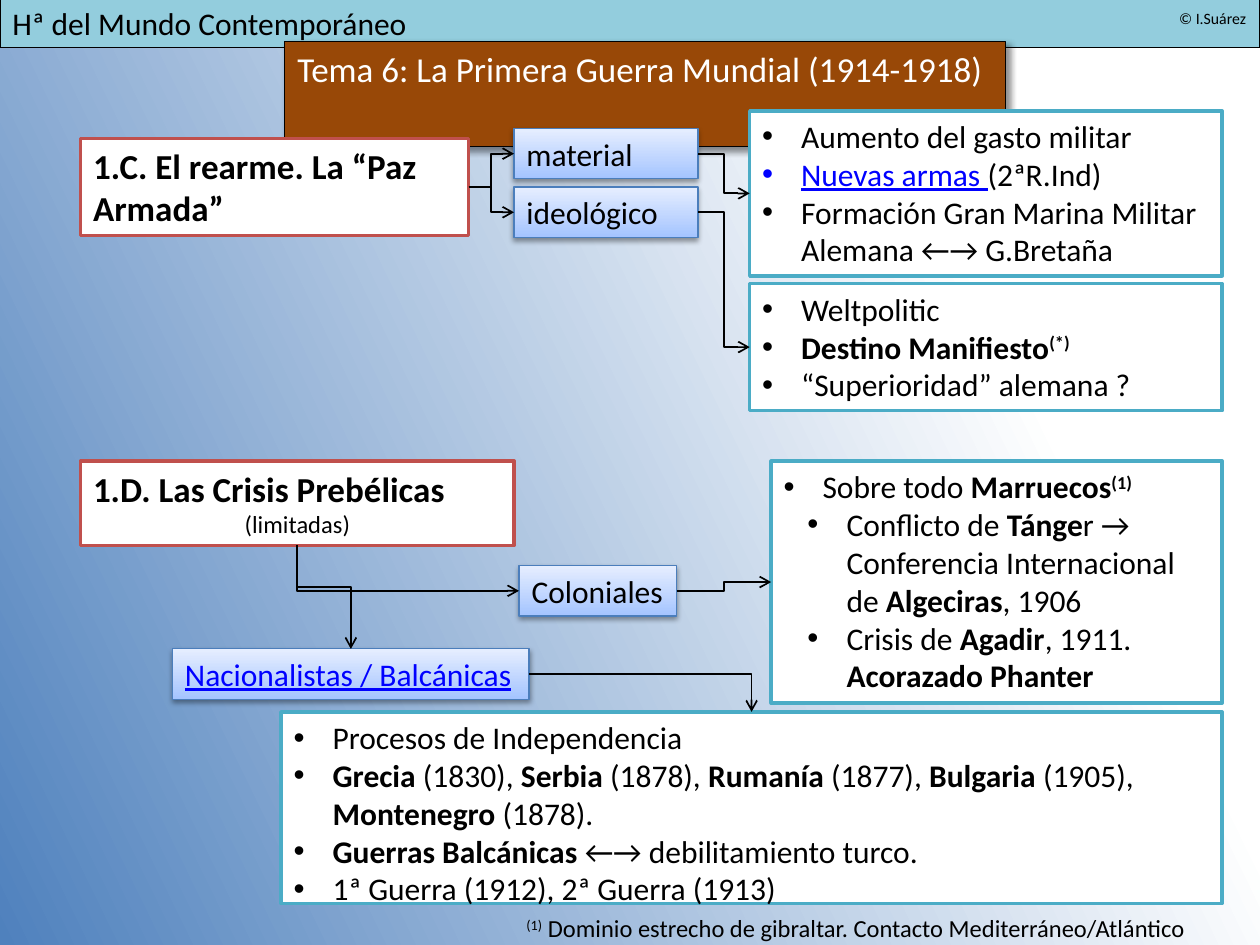
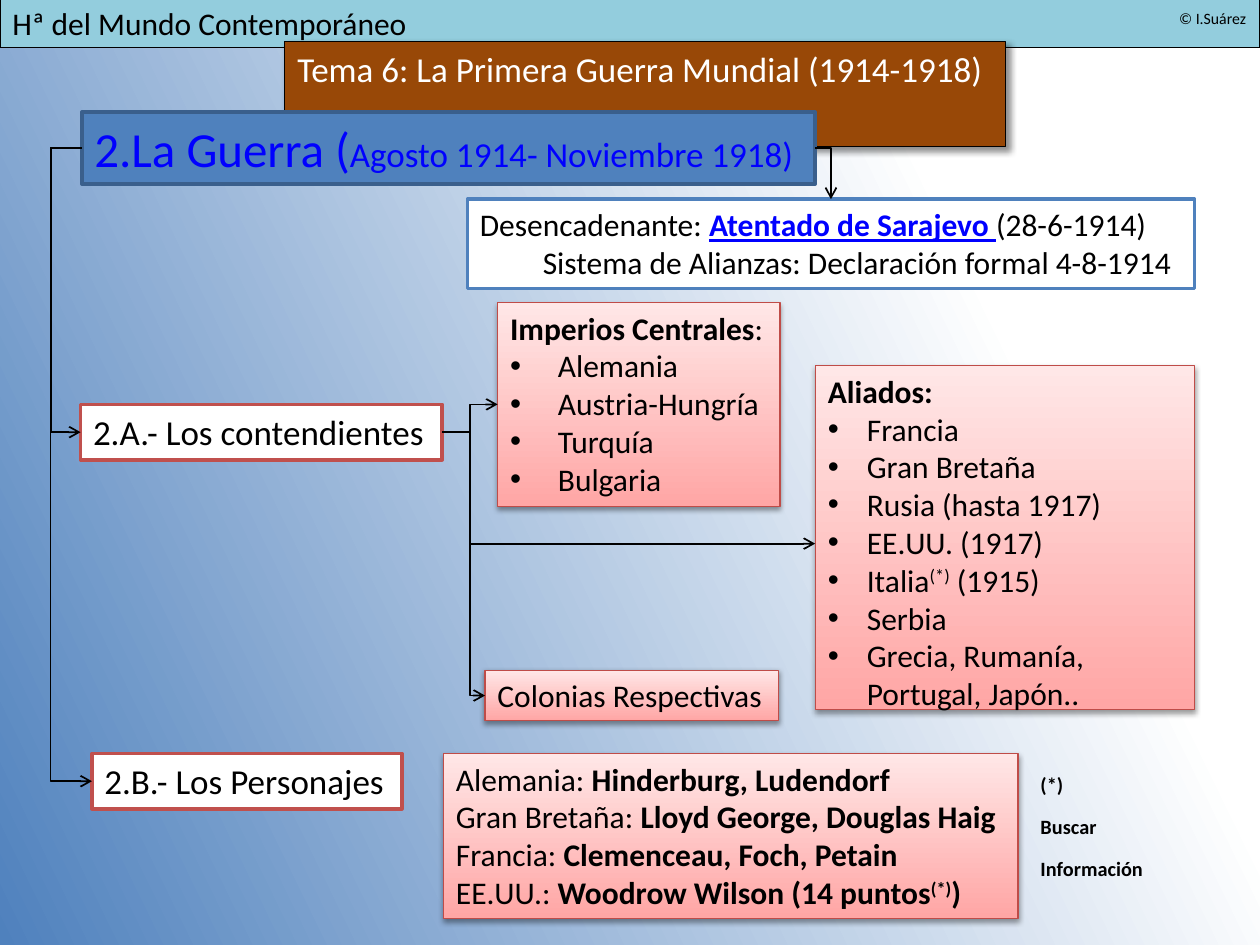
from lxml.etree import SubElement
from pptx import Presentation
from pptx.dml.color import RGBColor
from pptx.enum.shapes import MSO_CONNECTOR, MSO_SHAPE
from pptx.enum.text import MSO_ANCHOR, MSO_AUTO_SIZE, PP_ALIGN
from pptx.oxml.ns import qn
from pptx.util import Inches, Pt

FONT = "Calibri"
COLORS = {
    "black": "000000", "white": "FFFFFF", "link": "0000FF",
    "band": "93CDDD", "brown": "984807", "red": "C0504D", "teal": "4BACC6",
    "blue": "4F81BD", "navy": "3A5F8C",
    "sky dark": "A4C4FF", "sky light": "E6EEFF", "sky edge": "4B7EBC",
    "rose dark": "FFA6A5", "rose light": "FFE7E7", "rose edge": "BF4C48",
}
RGB = {name: RGBColor.from_string(value) for name, value in COLORS.items()}

# look: fill colours (two make a gradient), line colour, line width, shadow
SOFT = (38, 3.1, 1.6, 90)  # opacity %, blur pt, distance pt, direction
LOOKS = {
    "bare": ((), None, 0, None),
    "band": (("band",), "black", 0.75, None),
    "topic": (("brown",), "black", 0.75, (43, 4, 3, 45)),
    "heading": (("white",), "red", 2, None),
    "detail": (("white",), "teal", 2, None),
    "cause": (("white",), "blue", 2, None),
    "chapter": (("blue",), "navy", 2, None),
    "sky": (("sky dark", "sky light"), "sky edge", 0.75, SOFT),
    "rose": (("rose dark", "rose light"), "rose edge", 0.75, SOFT),
}

# paragraph: left margin, first-line indent, level, bullet
PARAGRAPHS = {
    "plain": (0, 0, 0, False),
    "center": (0, 0, 0, False),
    "indent": (0.5, 0, 1, False),
    "item": (0.31, -0.31, 0, True),
    "wide": (0.38, -0.38, 0, True),
    "sub": (0.5, -0.31, 1, True),
}

prs = Presentation()
prs.slide_width, prs.slide_height = Inches(10), Inches(7.5)
CELL = prs.slide_width / 100  # the grid has 100 columns and 75 rows
SITES = [(0.5, 0), (0, 0.5), (0.5, 1), (1, 0.5)]  # top, left, bottom, right
TOP, LEFT, BOTTOM, RIGHT = range(4)


def box(slide, look, area, paragraphs, size=18, wrap=True, holder=None):
    """Place a text box; runs are strings or (text, flags[, size]).

    Flags: b bold, u underlined, l link colour, w white, ^ superscript.
    """
    left, top, width, height = (round(n * CELL) for n in area)
    fills, edge, edge_width, shadow = LOOKS[look]
    if holder is not None:
        shape = holder
        shape.left, shape.top, shape.width, shape.height = left, top, width, height
    elif fills:
        shape = slide.shapes.add_shape(MSO_SHAPE.RECTANGLE, left, top, width, height)
    else:
        shape = slide.shapes.add_textbox(left, top, width, height)

    if len(fills) == 2:
        shape.fill.gradient()
        shape.fill.gradient_angle = 90
        for stop, color in zip(shape.fill.gradient_stops, fills):
            stop.color.rgb = RGB[color]
    elif fills:
        shape.fill.solid()
        shape.fill.fore_color.rgb = RGB[fills[0]]
    if edge:
        shape.line.color.rgb = RGB[edge]
        shape.line.width = Pt(edge_width)
        shape.shadow.inherit = False
    if shadow:
        add_shadow_to = shape.element.spPr.find(qn("a:effectLst"))
        opacity, blur, distance, direction = shadow
        outer = SubElement(add_shadow_to, qn("a:outerShdw"), blurRad=str(Pt(blur)),
                           dist=str(Pt(distance)), dir=str(direction * 60000),
                           rotWithShape="0")
        black = SubElement(outer, qn("a:srgbClr"), val=COLORS["black"])
        SubElement(black, qn("a:alpha"), val=str(opacity * 1000))

    frame = shape.text_frame
    frame.word_wrap = wrap
    frame.auto_size = MSO_AUTO_SIZE.SHAPE_TO_FIT_TEXT
    frame.vertical_anchor = MSO_ANCHOR.TOP
    for number, (kind, *runs) in enumerate(paragraphs):
        paragraph = frame.add_paragraph() if number else frame.paragraphs[0]
        margin, indent, level, bullet = PARAGRAPHS[kind]
        paragraph.alignment = PP_ALIGN.CENTER if kind == "center" else PP_ALIGN.LEFT
        paragraph.level = level
        paragraph.space_before = Pt(0)
        settings = paragraph._p.get_or_add_pPr()
        settings.set("marL", str(Inches(margin)))
        settings.set("indent", str(Inches(indent)))
        if bullet:
            SubElement(settings, qn("a:buFont"), typeface="Arial")
            SubElement(settings, qn("a:buChar"), char="•")
        else:
            SubElement(settings, qn("a:buNone"))
        for entry in runs:
            text, flags, *own_size = (entry, "") if isinstance(entry, str) else entry
            run = paragraph.add_run()
            run.text = text
            run.font.name = FONT
            run.font.size = Pt(own_size[0] if own_size else size)
            run.font.bold = "b" in flags
            run.font.underline = "u" in flags
            run.font.color.rgb = RGB["link" if "l" in flags else
                                     "white" if "w" in flags else "black"]
            if "^" in flags:
                run._r.get_or_add_rPr().set("baseline", "30000")
    return shape


def link(slide, start, start_site, end, end_site, bend=None, corner=False, arrow="tail"):
    """Join two boxes by an elbow arrow; bend is the grid line of its middle leg."""
    (bx, by), (ex, ey) = (
        (shape.left + shape.width * SITES[site][0], shape.top + shape.height * SITES[site][1])
        for shape, site in ((start, start_site), (end, end_site)))
    vertical = start_site in (TOP, BOTTOM)
    first, last = (by, ey) if vertical else (bx, ex)
    if vertical:  # laid out sideways, then turned by 90 degrees
        cx, cy, dx, dy = (bx + ex) / 2, (by + ey) / 2, ex - bx, ey - by
        bx, by, ex, ey = cx - dy / 2, cy + dx / 2, cx + dy / 2, cy - dx / 2
    elbow = slide.shapes.add_connector(
        MSO_CONNECTOR.ELBOW, *(round(n) for n in (bx, by, ex, ey)))
    elbow.line.color.rgb = RGB["black"]
    elbow.line.width = Pt(1)
    properties = elbow.element.spPr
    if vertical:
        properties.find(qn("a:xfrm")).set("rot", "5400000")
    geometry = properties.find(qn("a:prstGeom"))
    if corner:
        geometry.set("prst", "bentConnector2")
    if bend is not None:
        share = round((bend * CELL - first) / (last - first) * 100000)
        SubElement(geometry.find(qn("a:avLst")), qn("a:gd"), name="adj1", fmla=f"val {share}")
    SubElement(properties.find(qn("a:ln")), qn(f"a:{arrow}End"), type="arrow")
    SubElement(properties, qn("a:effectLst"))


# Shared background, band, credit and topic title
master = prs.slide_master
sky = master.background.fill
sky.gradient()
sky.gradient_angle = 26
for stop, color, position in zip(sky.gradient_stops, ("blue", "white"), (0, 0.76)):
    stop.color.rgb = RGB[color]
    stop.position = position

crises, war = (prs.slides.add_slide(prs.slide_layouts[1]) for _ in range(2))
band = box(crises, "band", (0, -0.2, 100, 4), [("plain", "Hª del Mundo Contemporáneo")])
credit = box(crises, "bare", (92.6, 0.2, 7.4, 2.5), [("plain", "© I.Suárez")], 9, False)
for number, shared in enumerate((band, credit), 20):
    shared.element.find(".//" + qn("p:cNvPr")).set("id", str(number))
    master.shapes.element.append(shared.element)
for slide in (crises, war):
    box(slide, "topic", (22.6, 3.3, 57.2, 4.4),
        [("plain", ("Tema 6: La Primera Guerra Mundial (1914-1918)", "w"))],
        20, False, slide.shapes.title)

# Slide 1: rearmament and the crises before the war
rearmament = box(crises, "heading", (6.4, 11, 30.8, 7.7),
                 [("plain", ("1.C. El rearme. La “Paz Armada”", "b"))], 20)
spending = box(crises, "detail", (59.5, 8.8, 37.5, 13.1), [
    ("item", "Aumento del gasto militar"),
    ("item", ("Nuevas armas ", "lu"), "(2ªR.Ind)"),
    ("item", "Formación Gran Marina Militar Alemana ←→ G.Bretaña"),
])
ideas = box(crises, "detail", (59.5, 22.5, 37.5, 10.1), [
    ("item", "Weltpolitic"),
    ("item", ("Destino Manifiesto", "b"), ("(*)", "b^")),
    ("item", "“Superioridad” alemana ?"),
])
material, ideological = (
    box(crises, "sky", (40.8, 10.2 + 4.65 * row, 14.6, 4), [("plain", word)])
    for row, word in enumerate(("material", "ideológico")))
prewar = box(crises, "heading", (6.4, 36.6, 34.4, 6.7), [
    ("plain", ("1.D. Las Crisis Prebélicas", "b")),
    ("center", ("(limitadas)", "", 14)),
], 20)
colonial = box(crises, "sky", (41.2, 44.9, 12.5, 4), [("plain", "Coloniales")], wrap=False)
morocco = box(crises, "detail", (61.2, 36.6, 35.8, 19.2), [
    ("item", "Sobre todo ", ("Marruecos", "b"), ("(1)", "b^")),
    ("sub", "Conflicto de ", ("Tánge", "b"), "r → Conferencia Internacional de ",
     ("Algeciras", "b"), ", 1906"),
    ("sub", "Crisis de ", ("Agadir", "b"), ", 1911. ", ("Acorazado Phanter", "b")),
])
balkan = box(crises, "sky", (13.7, 51.5, 28.3, 4),
             [("plain", ("Nacionalistas / Balcánicas", "lu"))], wrap=False)
independence = box(crises, "detail", (22.3, 56.5, 74.7, 16.2), [
    ("item", "Procesos de Independencia"),
    ("item", ("Grecia", "b"), " (1830), ", ("Serbia", "b"), " (1878), ", ("Rumanía", "b"),
     " (1877),", (" Bulgaria ", "b"), "(1905), ", ("Montenegro", "b"), " (1878)."),
    ("item", ("Guerras Balcánicas ", "b"), "←→ debilitamiento turco."),
    ("item", "1ª Guerra (1912), 2ª Guerra (1913)"),
], holder=crises.placeholders[1])
box(crises, "bare", (40.8, 72, 55.7, 3.4), [
    ("plain", ("(1)", "^"), " Dominio estrecho de gibraltar. Contacto Mediterráneo/Atlántico"),
], 14, False)

for start, end in ((material, spending), (ideological, ideas), (rearmament, material),
                   (rearmament, ideological)):
    link(crises, start, RIGHT, end, LEFT)
link(crises, colonial, RIGHT, morocco, LEFT)
link(crises, colonial, LEFT, prewar, BOTTOM, corner=True, arrow="head")
link(crises, prewar, BOTTOM, balkan, TOP, bend=46.6)
link(crises, balkan, RIGHT, independence, TOP, corner=True)

# Slide 2: the war, its sides and its leaders
chapter = box(war, "chapter", (6.5, 8.9, 58.2, 5.7), [
    ("plain", ("2.La Guerra (", "l", 28), ("Agosto 1914- Noviembre 1918)", "l", 20)),
], wrap=False)
trigger = box(war, "cause", (37.1, 15.8, 57.7, 7.1), [
    ("plain", "Desencadenante: ", ("Atentado de Sarajevo ", "blu"), "(28-6-1914)"),
    ("indent", "Sistema de Alianzas: Declaración formal 4-8-1914"),
], wrap=False)
contenders = box(war, "heading", (6.4, 32.1, 28.7, 4.4),
                 [("plain", "2.A.- Los contendientes")], 20, False)
empires = box(war, "rose", (39.5, 24, 22.4, 16.2), [
    ("plain", ("Imperios Centrales", "b"), ":"),
    *(("wide", country) for country in ("Alemania", "Austria-Hungría", "Turquía", "Bulgaria")),
], wrap=False)
allies = box(war, "rose", (64.7, 29, 30.1, 28.3), [
    ("plain", ("Aliados:", "b")),
    *(("item", country) for country in
      ("Francia", "Gran Bretaña", "Rusia (hasta 1917)", "EE.UU. (1917)")),
    ("item", "Italia", ("(*)", "^"), " (1915)"),
    ("item", "Serbia"),
    ("item", "Grecia, Rumanía, Portugal, Japón.."),
], holder=war.placeholders[1])
colonies = box(war, "rose", (38.5, 53.2, 23.3, 4), [("plain", "Colonias Respectivas")],
               wrap=False)
leaders = box(war, "heading", (7.3, 59.8, 24.6, 4.4),
              [("plain", "2.B.- Los Personajes")], 20, False)
box(war, "rose", (35.2, 59.8, 45.6, 13.1), [
    ("plain", "Alemania: ", ("Hinderburg, Ludendorf", "b")),
    ("plain", "Gran Bretaña: ", ("Lloyd George, Douglas Haig", "b")),
    ("plain", "Francia: ", ("Clemenceau, Foch, Petain", "b")),
    ("plain", "EE.UU.: ", ("Woodrow Wilson (14 puntos", "b"), ("(*)", "b^"), (")", "b")),
], wrap=False)
box(war, "bare", (81.6, 60.5, 12.6, 7.7),
    [("plain", (text, "b^")) for text in ("(*)", "Buscar Información")], 20)

link(war, chapter, RIGHT, trigger, TOP, corner=True)
for section in (contenders, leaders):
    link(war, chapter, LEFT, section, LEFT, bend=4)
for side in (empires, allies, colonies):
    link(war, contenders, RIGHT, side, LEFT, bend=37.3)

prs.save("out.pptx")
